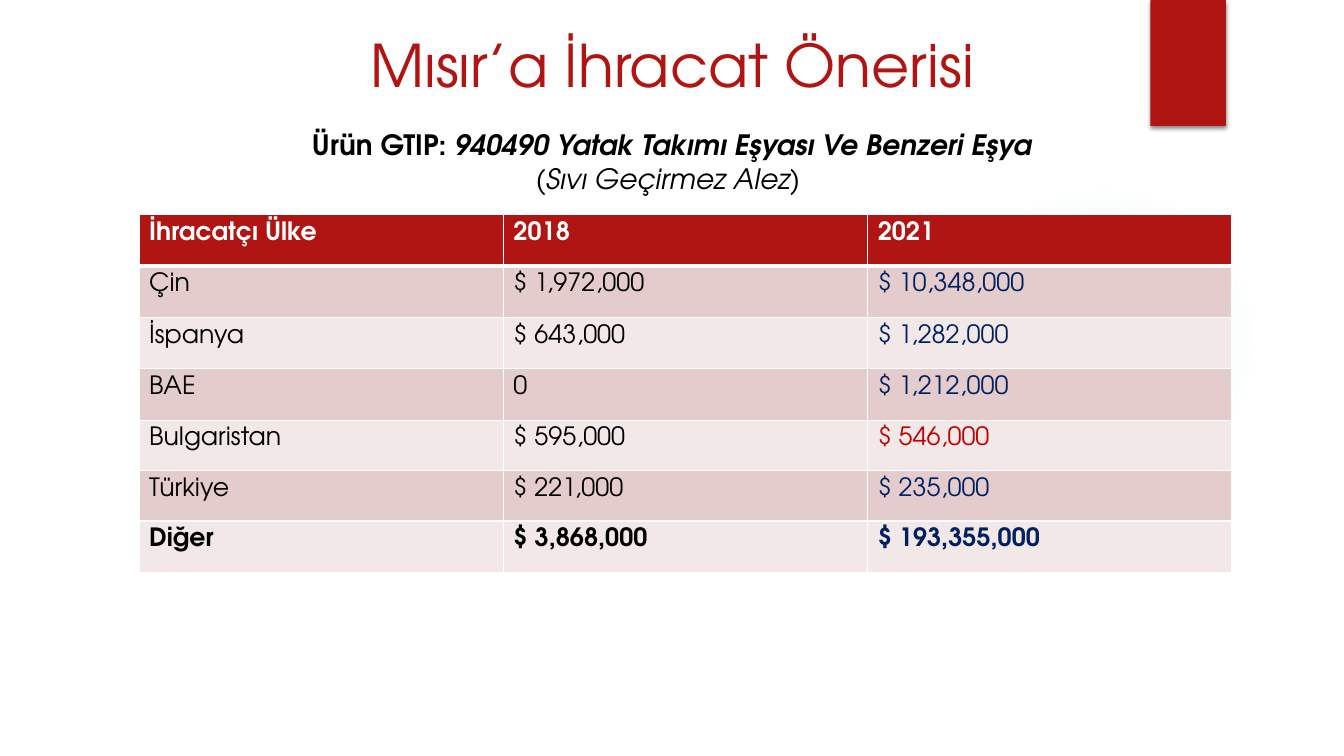
from lxml import etree
from pptx import Presentation
from pptx.dml.color import RGBColor
from pptx.enum.shapes import MSO_SHAPE
from pptx.enum.text import MSO_ANCHOR, MSO_AUTO_SIZE, PP_ALIGN
from pptx.oxml import parse_xml
from pptx.oxml.ns import nsdecls, qn
from pptx.util import Inches, Pt

RECTANGLE, OVAL = MSO_SHAPE.RECTANGLE, MSO_SHAPE.OVAL
TOP = MSO_ANCHOR.TOP
CENTER, LEFT = PP_ALIGN.CENTER, PP_ALIGN.LEFT
FIXED_SIZE, GROW = MSO_AUTO_SIZE.NONE, MSO_AUTO_SIZE.SHAPE_TO_FIT_TEXT

FONT = "TeX Gyre Adventor"
COLORS = {
    "red": "B01513",
    "white": "FFFFFF",
    "black": "000000",
    "navy": "002060",
    "decline": "C00000",
    "band_dark": "E4CCCC",
    "band_light": "F2E8E7",
    "glow": "50B9C1",
}
GLOW_STOPS = [(0, 7), (36, 6), (69, 0)]
ROW_HEIGHTS = [0.51, 0.51, 0.51, 0.51, 0.5, 0.5, 0.51]
HEADER = ["İhracatçı Ülke", "2018", "2021"]
EXPORTERS = [
    ["Çin", "$ 1,972,000", "$ 10,348,000"],
    ["İspanya", "$ 643,000", "$ 1,282,000"],
    ["BAE", "0", "$ 1,212,000"],
    ["Bulgaristan", "$ 595,000", "$ 546,000"],
    ["Türkiye", "$ 221,000", "$ 235,000"],
    ["Diğer", "$ 3,868,000", "$ 193,355,000"],
]


def color(name):
    return RGBColor.from_string(COLORS[name])


def add_text(paragraph, text, size=18, color_name="black", bold=False, italic=False, align=LEFT):
    paragraph.alignment = align
    run = paragraph.add_run()
    run.text = text
    run.font.name = FONT
    run.font.size = Pt(size)
    run.font.bold = bold
    run.font.italic = italic
    run.font.color.rgb = color(color_name)


class ExportSlide:
    def __init__(self, presentation):
        self.slide = presentation.slides.add_slide(presentation.slide_layouts[5])
        self.slide.background.fill.solid()
        self.slide.background.fill.fore_color.rgb = color("white")

    def shape(self, kind, left, top, width, height):
        shape = self.slide.shapes.add_shape(
            kind, Inches(left), Inches(top), Inches(width), Inches(height))
        shape.shadow.inherit = False
        shape.line.fill.background()
        return shape

    def glow(self, left, top, diameter):
        shape = self.shape(OVAL, left, top, diameter, diameter)
        stops = "".join(
            f'<a:gs pos="{position * 1000}"><a:srgbClr val="{COLORS["glow"]}">'
            f'<a:alpha val="{opacity * 1000}"/></a:srgbClr></a:gs>'
            for position, opacity in GLOW_STOPS)
        gradient = parse_xml(
            f'<a:gradFill {nsdecls("a")}><a:gsLst>{stops}</a:gsLst><a:path path="circle">'
            '<a:fillToRect l="50000" t="50000" r="50000" b="50000"/></a:path></a:gradFill>')
        shape._element.spPr.find(qn("a:prstGeom")).addnext(gradient)

    def ribbon(self, left, top, width, height):
        shape = self.shape(RECTANGLE, left, top, width, height)
        shape.fill.solid()
        shape.fill.fore_color.rgb = color("red")
        effects = shape._element.spPr.find(qn("a:effectLst"))
        shadow = etree.SubElement(
            effects, qn("a:outerShdw"), blurRad=str(Pt(3)), dist=str(Pt(2)),
            dir="5400000", algn="ctr", rotWithShape="0")
        shadow_color = etree.SubElement(shadow, qn("a:srgbClr"), val=COLORS["black"])
        etree.SubElement(shadow_color, qn("a:alpha"), val="45000")

    def title(self, text, left, top, width, height):
        title = self.slide.shapes.title
        title.left, title.top = Inches(left), Inches(top)
        title.width, title.height = Inches(width), Inches(height)
        frame = title.text_frame
        frame.auto_size = FIXED_SIZE
        frame.vertical_anchor = TOP
        add_text(frame.paragraphs[0], text, size=42, color_name="red", align=CENTER)

    def subtitle(self, lines, left, top, width, height):
        box = self.slide.shapes.add_textbox(
            Inches(left), Inches(top), Inches(width), Inches(height))
        frame = box.text_frame
        frame.word_wrap = True
        frame.auto_size = GROW
        for index, runs in enumerate(lines):
            paragraph = frame.add_paragraph() if index else frame.paragraphs[0]
            for text, bold, italic in runs:
                add_text(paragraph, text, size=20, bold=bold, italic=italic, align=CENTER)

    def cell(self, cell, text, fill, top_width=1, bottom_width=1, **text_format):
        cell.margin_top = Inches(0.07)
        cell.margin_bottom = Inches(0.05)
        cell.vertical_anchor = TOP
        properties = cell._tc.get_or_add_tcPr()
        for side, width in (("L", 1), ("R", 1), ("T", top_width), ("B", bottom_width)):
            border = etree.SubElement(properties, qn(f"a:ln{side}"), w=str(Pt(width)))
            border_fill = etree.SubElement(border, qn("a:solidFill"))
            etree.SubElement(border_fill, qn("a:srgbClr"), val=COLORS["white"])
        cell.fill.solid()
        cell.fill.fore_color.rgb = color(fill)
        add_text(cell.text_frame.paragraphs[0], text, **text_format)

    def table(self, header, rows, left, top, width):
        table = self.slide.shapes.add_table(
            len(rows) + 1, len(header), Inches(left), Inches(top),
            Inches(width), Inches(sum(ROW_HEIGHTS))).table
        for column in table.columns:
            column.width = Inches(width / len(header))
        for row, height in zip(table.rows, ROW_HEIGHTS):
            row.height = Inches(height)
        for column, text in enumerate(header):
            self.cell(table.cell(0, column), text, "red", bottom_width=3,
                      color_name="white", bold=True)
        for index, values in enumerate(rows, 1):
            fill = "band_dark" if index % 2 else "band_light"
            latest_color = "decline" if values[0] == "Bulgaristan" else "navy"
            for column, text in enumerate(values):
                self.cell(table.cell(index, column), text, fill,
                          top_width=3 if index == 1 else 1,
                          bold=index == len(rows),
                          color_name=latest_color if column == 2 else "black")


def main():
    presentation = Presentation()
    presentation.slide_width = Inches(13.33)
    presentation.slide_height = Inches(7.5)
    page = ExportSlide(presentation)
    page.glow(9.41, 1.83, 3.08)
    page.ribbon(11.41, 0, 0.75, 1.25)
    page.title("Mısır’a İhracat Önerisi", 0, 0.23, 13.33, 0.94)
    page.table(HEADER, EXPORTERS, 1.38, 2.13, 10.84)
    page.subtitle([
        [("Ürün GTIP: ", True, False),
         ("940490 Yatak Takımı Eşyası Ve Benzeri Eşya", True, True)],
        [("(Sıvı Geçirmez Alez) ", False, True)],
    ], 0, 1.22, 13.33, 0.77)
    presentation.save("out.pptx")


if __name__ == "__main__":
    main()
